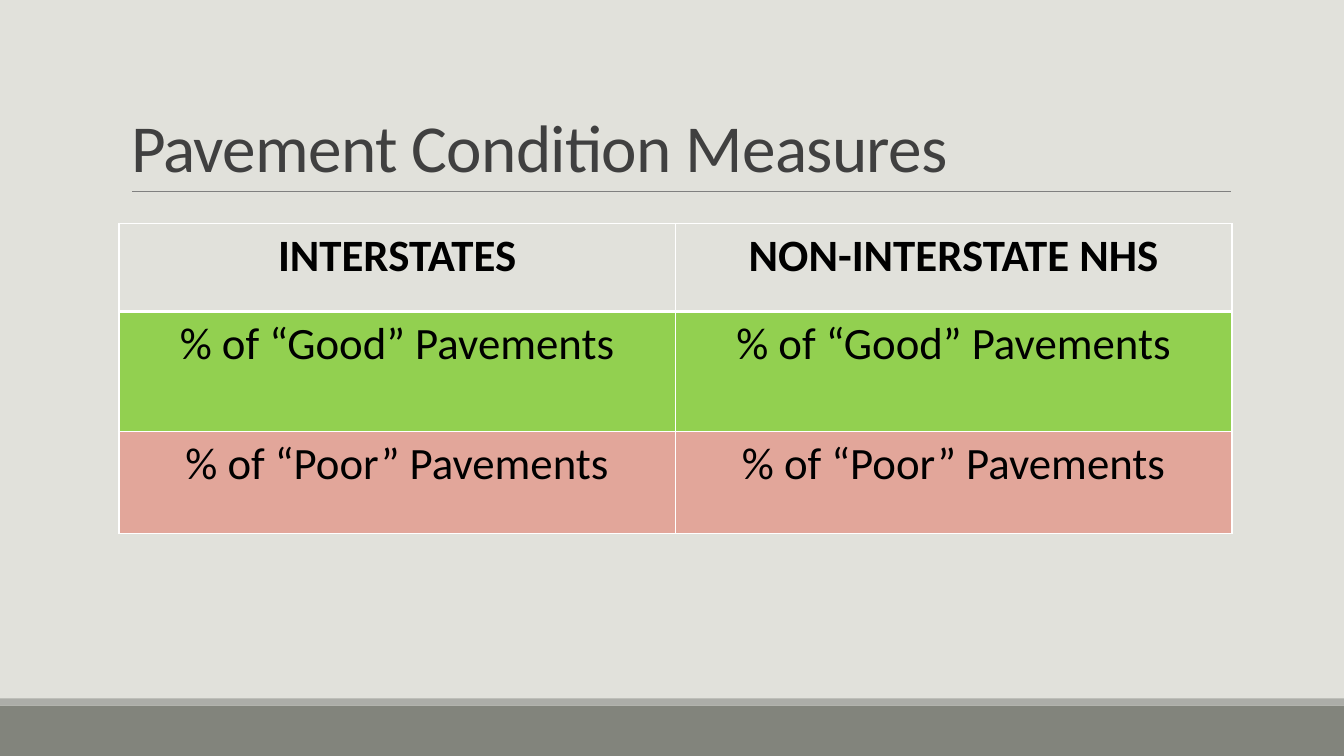
import pptx
import pptx.util
import pptx.dml.color
import pptx.enum.shapes
import pptx.enum.text
import pptx.oxml.ns
from lxml import etree

Inches, Pt = pptx.util.Inches, pptx.util.Pt

# Content
TITLE = "Pavement Condition Measures"
FONT = "Calibri"
BACKGROUND = "E1E1DB"
# text per column, row height, fill, bottom border width
ROWS = [
    (("INTERSTATES", "NON-INTERSTATE NHS"), 0.87, None, 3),
    (("% of “Good” Pavements",) * 2, 1.19, "92D050", 1),
    (("% of “Poor” Pavements",) * 2, 1.01, "E2A69A", 1),
]
COL_WIDTH = 5.52
# top, height, fill
FOOTER_BANDS = [(7, 0.5, "82847C"), (6.93, 0.07, "ACADA8")]


def rgb(hex_color):
    return pptx.dml.color.RGBColor.from_string(hex_color)


def format_run(r, size, color, bold=False):
    r.font.name = FONT
    r.font.size = Pt(size)
    r.font.bold = bold
    r.font.color.rgb = rgb(color)


def set_borders(cell, widths, color="FFFFFF"):
    tc_pr = cell._tc.get_or_add_tcPr()
    for i, (side, width) in enumerate(widths.items()):
        ln = etree.Element(pptx.oxml.ns.qn("a:ln" + side), w=str(Pt(width)))
        fill = etree.SubElement(ln, pptx.oxml.ns.qn("a:solidFill"))
        etree.SubElement(fill, pptx.oxml.ns.qn("a:srgbClr"), val=color)
        tc_pr.insert(i, ln)


prs = pptx.Presentation()
prs.slide_width, prs.slide_height = Inches(13.33), Inches(7.5)
s = prs.slides.add_slide(prs.slide_layouts[5])
s.background.fill.solid()
s.background.fill.fore_color.rgb = rgb(BACKGROUND)

# Footer bands
for top, height, color in FOOTER_BANDS:
    sp = s.shapes.add_shape(pptx.enum.shapes.MSO_SHAPE.RECTANGLE,
                            0, Inches(top), prs.slide_width, Inches(height))
    sp.shadow.inherit = False
    sp.fill.solid()
    sp.fill.fore_color.rgb = rgb(color)
    sp.line.fill.background()

# Rule under the title
rule = s.shapes.add_connector(pptx.enum.shapes.MSO_CONNECTOR.STRAIGHT,
                              Inches(1.31), Inches(1.9), Inches(12.21), Inches(1.9))
rule.line.color.rgb = rgb("808080")
rule.line.width = Pt(0.5)
etree.SubElement(rule._element.spPr, pptx.oxml.ns.qn("a:effectLst"))

# Title
title = s.shapes.title
title.left, title.top = Inches(1.2), Inches(0.31)
title.width, title.height = Inches(11), Inches(1.59)
tf = title.text_frame
tf.text = TITLE
tf.word_wrap = True
tf.auto_size = pptx.enum.text.MSO_AUTO_SIZE.NONE
tf.vertical_anchor = pptx.enum.text.MSO_ANCHOR.BOTTOM
p = tf.paragraphs[0]
p.alignment = pptx.enum.text.PP_ALIGN.LEFT
p.line_spacing = 0.85
format_run(p.runs[0], 48, "404040")
p.runs[0].font._element.set("spc", "-50")

# Table
n_cols = len(ROWS[0][0])
table = s.shapes.add_table(len(ROWS), n_cols, Inches(1.18), Inches(2.22),
                           Inches(COL_WIDTH * n_cols),
                           Inches(sum(row[1] for row in ROWS))).table
table.horz_banding = False
for col in table.columns:
    col.width = Inches(COL_WIDTH)
top_width = 1
for i, (texts, height, fill, bottom_width) in enumerate(ROWS):
    table.rows[i].height = Inches(height)
    for j, text in enumerate(texts):
        cell = table.cell(i, j)
        cell.text = text
        p = cell.text_frame.paragraphs[0]
        p.alignment = pptx.enum.text.PP_ALIGN.CENTER
        format_run(p.runs[0], 32, "000000", bold=i == 0)
        if fill:
            cell.fill.solid()
            cell.fill.fore_color.rgb = rgb(fill)
        else:
            cell.fill.background()
        set_borders(cell, {"L": 1, "R": 1, "T": top_width, "B": bottom_width})
    top_width = bottom_width

prs.save("out.pptx")
